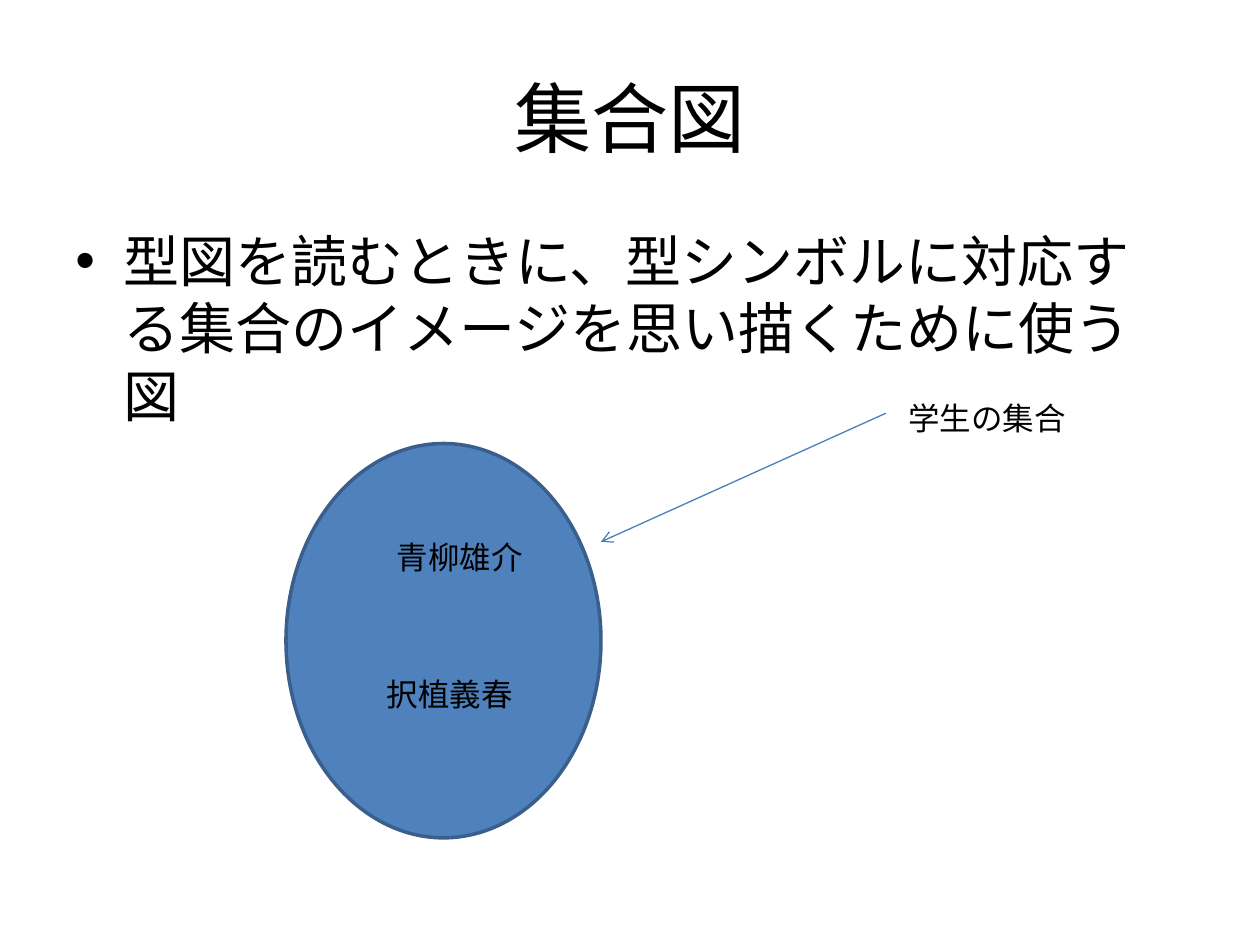
from dataclasses import dataclass

import pptx
import pptx.dml.color
import pptx.enum.shapes
import pptx.enum.text
import pptx.oxml.ns
import pptx.util
from lxml import etree

Inches, Pt = pptx.util.Inches, pptx.util.Pt
RGBColor = pptx.dml.color.RGBColor
qn = pptx.oxml.ns.qn
PP_ALIGN = pptx.enum.text.PP_ALIGN
ANCHOR = pptx.enum.text.MSO_ANCHOR

FONT = "Calibri"
BLACK = RGBColor(0x00, 0x00, 0x00)
SET_FILL = RGBColor(0x4F, 0x81, 0xBD)
SET_LINE = RGBColor(0x3A, 0x5F, 0x8C)
ARROW = RGBColor(0x4B, 0x7E, 0xBC)


@dataclass
class Label:
    text: str
    left: float
    top: float
    width: float
    height: float = 0.4


LABELS = [
    Label("青柳雄介", 3.05, 4.22, 1.21),
    Label("択植義春", 2.97, 5.31, 1.21),
    Label("学生の集合", 7.11, 3.12, 1.46),
]


def write(tf, text: str, size: float, align=PP_ALIGN.LEFT):
    """Fill the first paragraph with one formatted run and return it."""
    p = tf.paragraphs[0]
    p.alignment = align
    r = p.add_run()
    r.text = text
    for name, value in {"name": FONT, "size": Pt(size)}.items():
        setattr(r.font, name, value)
    r.font.color.rgb = BLACK
    return p


def add_title(slide, text: str) -> None:
    sp = slide.shapes.title
    box = {"left": 0.5, "top": 0.3, "width": 9, "height": 1.25}
    for name, value in box.items():
        setattr(sp, name, Inches(value))
    sp.text_frame.vertical_anchor = ANCHOR.MIDDLE
    write(sp.text_frame, text, 44, PP_ALIGN.CENTER)


def add_bullet(slide, text: str) -> None:
    sp = slide.shapes.add_textbox(Inches(0.5), Inches(1.75), Inches(9), Inches(4.95))
    tf = sp.text_frame
    tf.word_wrap = True
    p = write(tf, text, 32)
    p.space_before = Pt(6.4)
    pPr = p._p.get_or_add_pPr()
    pPr.set("marL", str(Inches(0.38)))
    pPr.set("indent", str(Inches(-0.38)))
    etree.SubElement(pPr, qn("a:buFont")).set("typeface", "Arial")
    etree.SubElement(pPr, qn("a:buChar")).set("char", "•")


def add_set(slide) -> None:
    sp = slide.shapes.add_shape(
        pptx.enum.shapes.MSO_SHAPE.OVAL,
        Inches(2.27), Inches(3.52), Inches(2.5), Inches(3.13))
    sp.shadow.inherit = False
    sp.fill.solid()
    sp.fill.fore_color.rgb = SET_FILL
    sp.line.color.rgb = SET_LINE
    sp.line.width = Pt(2)


def add_label(slide, label: Label) -> None:
    sp = slide.shapes.add_textbox(
        Inches(label.left), Inches(label.top), Inches(label.width), Inches(label.height))
    tf = sp.text_frame
    tf.word_wrap = False
    tf.auto_size = pptx.enum.text.MSO_AUTO_SIZE.SHAPE_TO_FIT_TEXT
    write(tf, label.text, 18)


def add_arrow(slide) -> None:
    line = slide.shapes.add_connector(
        pptx.enum.shapes.MSO_CONNECTOR.STRAIGHT,
        Inches(7.03), Inches(3.28), Inches(4.77), Inches(4.3))
    line.line.color.rgb = ARROW
    line.line.width = Pt(0.75)
    etree.SubElement(line.line._get_or_add_ln(), qn("a:tailEnd")).set("type", "arrow")
    etree.SubElement(line._element.spPr, qn("a:effectLst"))


def main() -> None:
    prs = pptx.Presentation()
    prs.slide_width, prs.slide_height = Inches(10), Inches(7.5)
    slide = prs.slides.add_slide(prs.slide_layouts[5])
    add_title(slide, "集合図")
    add_bullet(slide, "型図を読むときに、型シンボルに対応する集合のイメージを思い描くために使う図")
    add_set(slide)
    for label in LABELS:
        add_label(slide, label)
    add_arrow(slide)
    prs.save("out.pptx")


if __name__ == "__main__":
    main()
